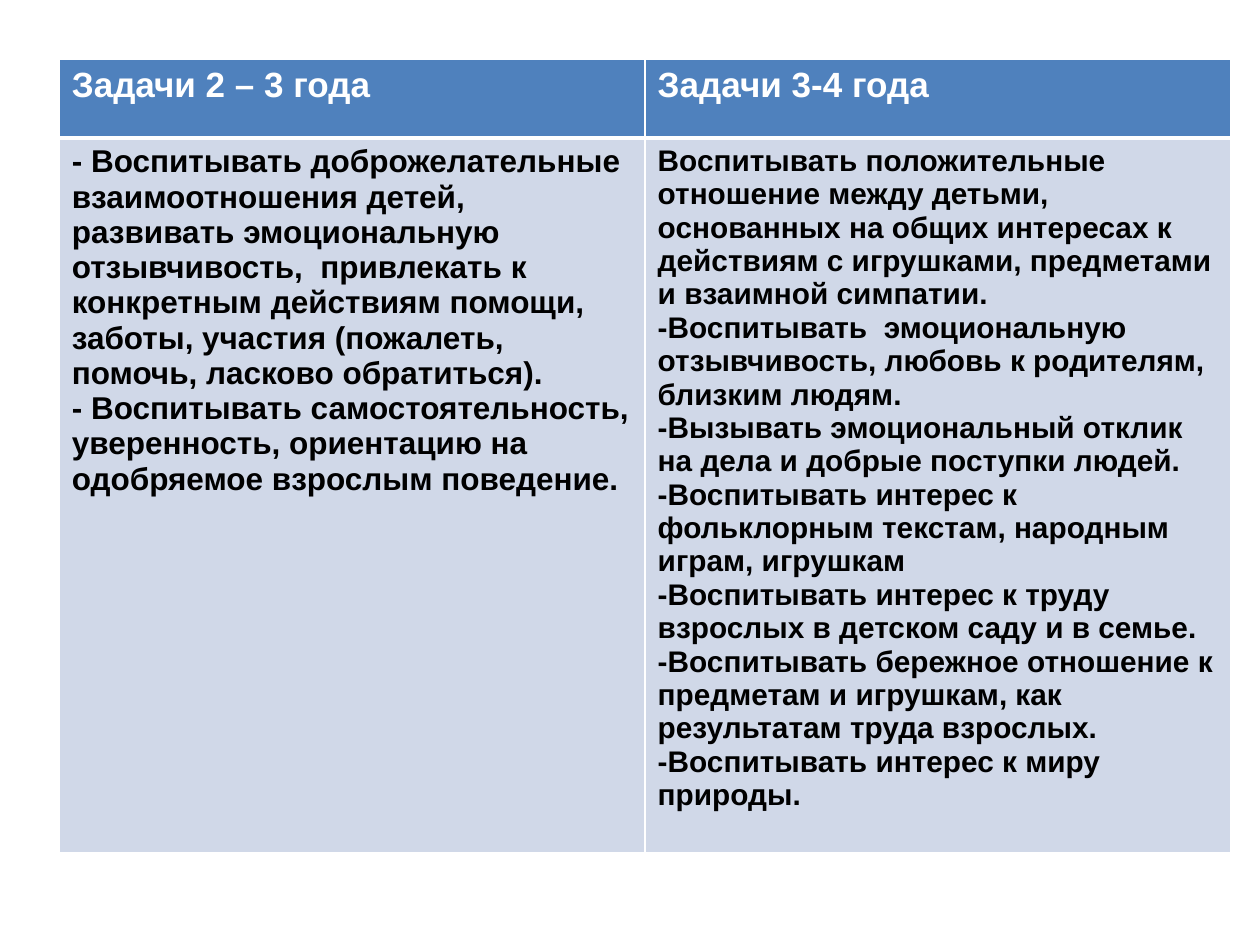
"""Build a slide with a two-column table of educational goals by age."""
from dataclasses import dataclass

from lxml import etree
from pptx import Presentation
from pptx.dml.color import RGBColor
from pptx.oxml.ns import qn
from pptx.util import Inches, Pt

WIDTH, HEIGHT = 10, 7.5
LEFT, TOP = 0.047 * WIDTH, 0.063 * HEIGHT
COLUMN = 0.465 * WIDTH
ROWS = (0.083 * HEIGHT, 0.756 * HEIGHT)
WHITE, BLACK, BLUE, PALE = "FFFFFF", "000000", "4F81BD", "D0D8E8"


@dataclass
class AgeGroup:
    """Goals for one age group."""
    title: str
    goals: tuple[str, ...]
    size: float


@dataclass
class CellStyle:
    """Look of one table row's cells."""
    fill: str
    color: str
    top: float
    bottom: float


HEADER = CellStyle(BLUE, WHITE, 1, 3)
BODY = CellStyle(PALE, BLACK, 3, 1)

GROUPS = (
    AgeGroup("Задачи 2 – 3 года", (
        "- Воспитывать доброжелательные взаимоотношения детей, развивать "
        "эмоциональную отзывчивость,  привлекать к конкретным действиям "
        "помощи, заботы, участия (пожалеть, помочь, ласково обратиться).",
        "- Воспитывать самостоятельность, уверенность, ориентацию на "
        "одобряемое взрослым поведение.",
    ), 18),
    AgeGroup("Задачи 3-4 года", (
        "Воспитывать положительные отношение между детьми, основанных на "
        "общих интересах к действиям с игрушками, предметами и взаимной "
        "симпатии.",
        "-Воспитывать  эмоциональную отзывчивость, любовь к родителям, "
        "близким людям.",
        "-Вызывать эмоциональный отклик на дела и добрые поступки людей.",
        "-Воспитывать интерес к фольклорным текстам, народным играм, игрушкам",
        "-Воспитывать интерес к труду взрослых в детском саду и в семье.",
        "-Воспитывать бережное отношение к предметам и игрушкам, как "
        "результатам труда взрослых.",
        "-Воспитывать интерес к миру природы.",
    ), 17),
)


def rgb(value: str) -> RGBColor:
    """Turn a hex string into a colour."""
    return RGBColor.from_string(value)


def add_borders(cell, top: float, bottom: float) -> None:
    """Draw white borders around a cell."""
    tc_pr = cell._tc.get_or_add_tcPr()
    for side, width in (("L", 1), ("R", 1), ("T", top), ("B", bottom)):
        ln = etree.SubElement(tc_pr, qn(f"a:ln{side}"), w=str(Pt(width)))
        fill = etree.SubElement(ln, qn("a:solidFill"))
        etree.SubElement(fill, qn("a:srgbClr"), val=WHITE)


def fill_cell(cell, texts: tuple[str, ...], size: float, style: CellStyle) -> None:
    """Style a cell and write one paragraph per text."""
    add_borders(cell, style.top, style.bottom)
    cell.fill.solid()
    cell.fill.fore_color.rgb = rgb(style.fill)
    tf = cell.text_frame
    for i, text in enumerate(texts):
        p = tf.add_paragraph() if i else tf.paragraphs[0]
        r = p.add_run()
        r.text = text
        r.font.name = "Arial"
        r.font.size = Pt(size)
        r.font.bold = True
        r.font.color.rgb = rgb(style.color)


def add_goals_table(s, groups: tuple[AgeGroup, ...]) -> None:
    """Add the table with one column per age group."""
    table = s.shapes.add_table(
        len(ROWS), len(groups), Inches(LEFT), Inches(TOP),
        Inches(COLUMN * len(groups)), Inches(sum(ROWS))).table
    for row, height in zip(table.rows, ROWS):
        row.height = Inches(height)
    for i, group in enumerate(groups):
        table.columns[i].width = Inches(COLUMN)
        fill_cell(table.cell(0, i), (group.title,), 20, HEADER)
        fill_cell(table.cell(1, i), group.goals, group.size, BODY)


def main() -> None:
    """Build and save the presentation."""
    prs = Presentation()
    prs.slide_width, prs.slide_height = Inches(WIDTH), Inches(HEIGHT)
    s = prs.slides.add_slide(prs.slide_layouts[6])
    add_goals_table(s, GROUPS)
    prs.save("out.pptx")


if __name__ == "__main__":
    main()
